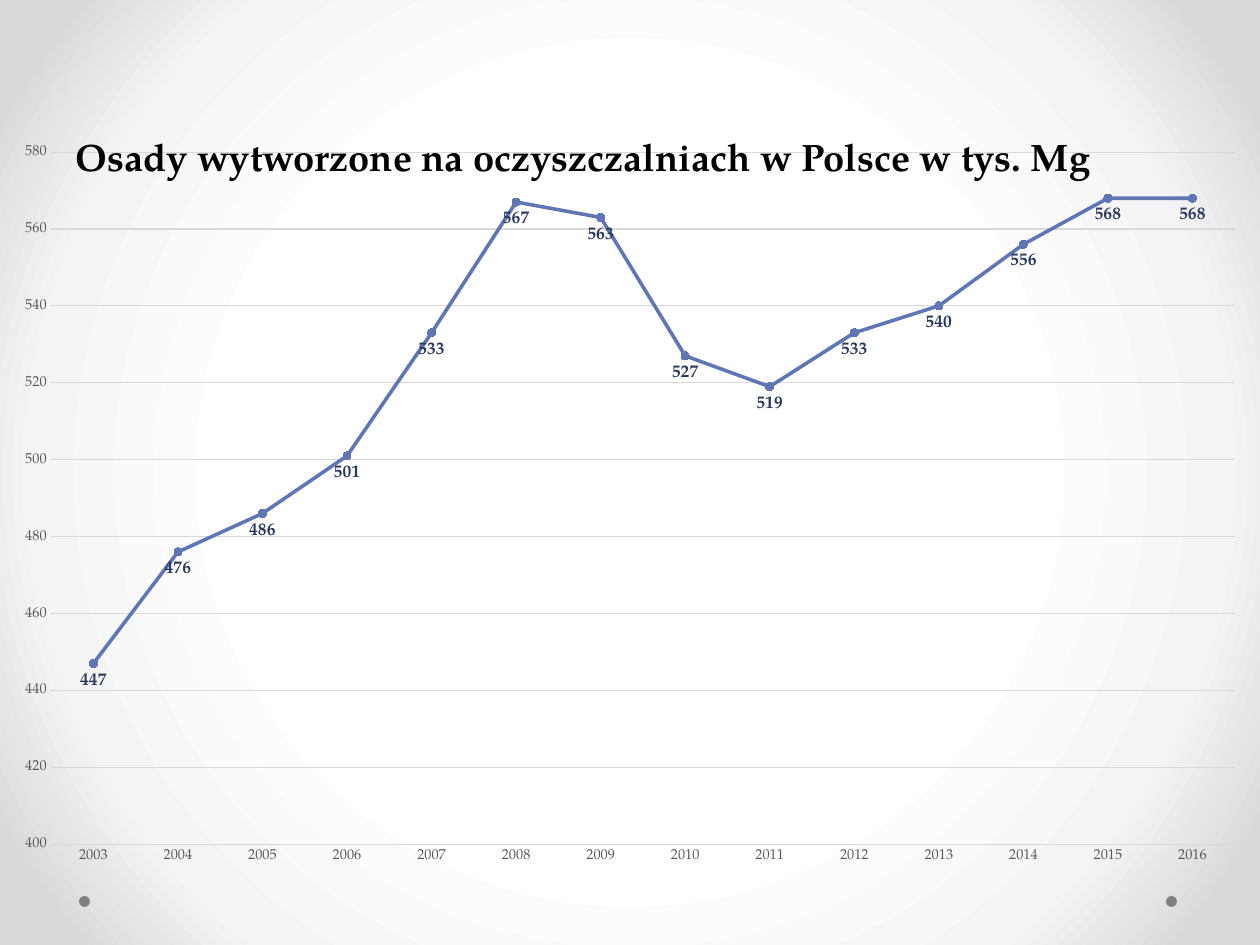
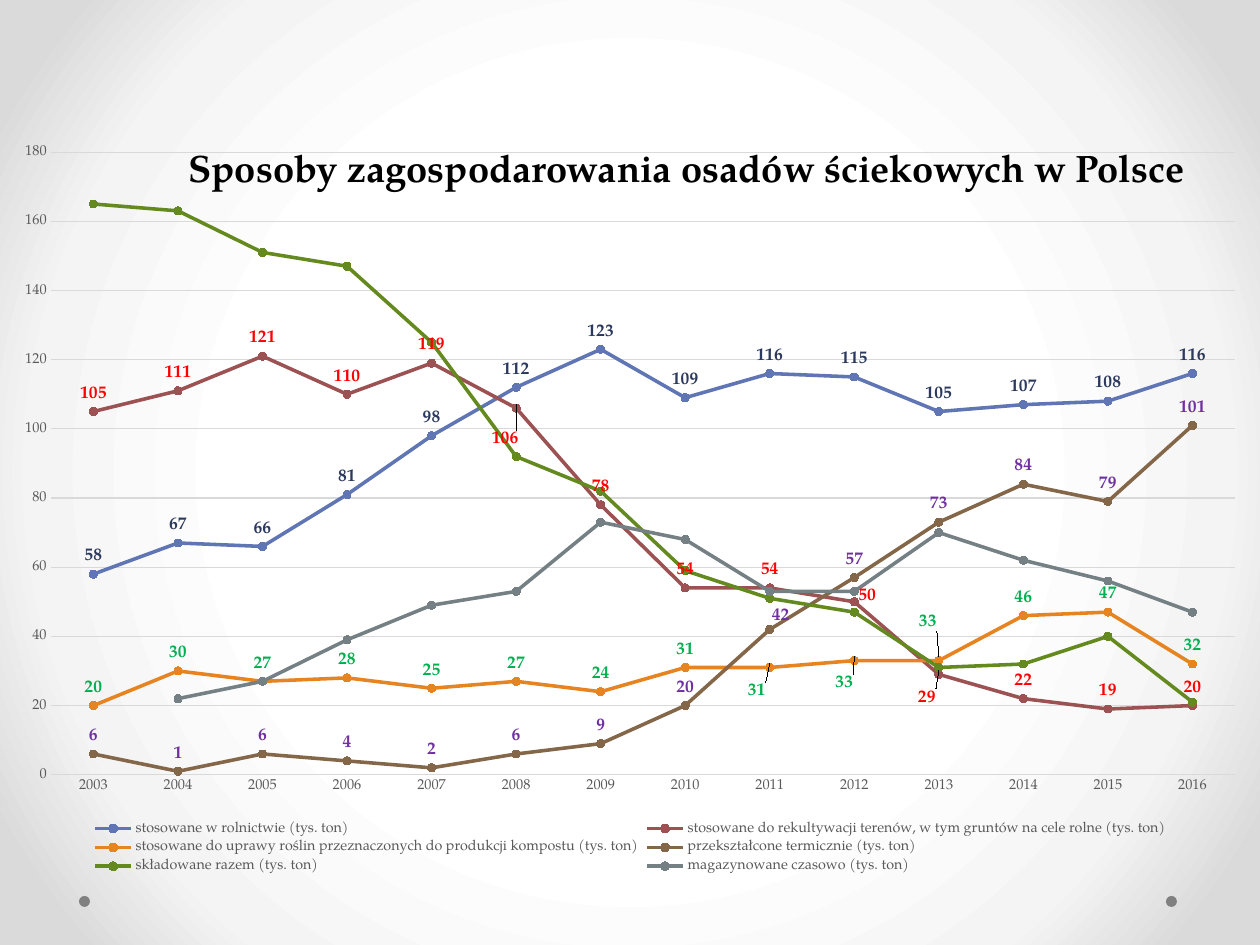
from pptx import Presentation
from pptx.chart.data import CategoryChartData
from pptx.dml.color import RGBColor
from pptx.enum.chart import (XL_CHART_TYPE, XL_LABEL_POSITION, XL_LEGEND_POSITION,
                             XL_MARKER_STYLE, XL_TICK_MARK)
from pptx.enum.shapes import MSO_SHAPE
from pptx.enum.text import MSO_ANCHOR, MSO_AUTO_SIZE, PP_ALIGN
from pptx.oxml import parse_xml
from pptx.oxml.ns import nsdecls
from pptx.util import Pt

# Scale and shared boxes: left, top, width, height in px
PX = 8000
SLIDE_WIDTH, SLIDE_HEIGHT = 1260, 945
CHART_BOX = (0, 130, 1260, 748)
DOT_SIZE, DOT_TOP, DOT_LEFTS = 11, 896, (79, 1166)

# Colours
BLACK = RGBColor(0x00, 0x00, 0x00)
DOT_GRAY = RGBColor(0x80, 0x80, 0x80)
AXIS_GRAY = RGBColor(0x59, 0x59, 0x59)
GRID_GRAY = RGBColor(0xD9, 0xD9, 0xD9)
BLUE = RGBColor(0x60, 0x76, 0xB4)
MAROON = RGBColor(0x9C, 0x52, 0x52)
ORANGE = RGBColor(0xE6, 0x84, 0x22)
BROWN = RGBColor(0x84, 0x66, 0x48)
OLIVE = RGBColor(0x63, 0x89, 0x1F)
SLATE = RGBColor(0x75, 0x80, 0x85)
NAVY = RGBColor(0x2C, 0x39, 0x5E)
RED = RGBColor(0xFF, 0x00, 0x00)
GREEN = RGBColor(0x00, 0xB0, 0x50)
PURPLE = RGBColor(0x70, 0x30, 0xA0)
BACKDROP_STOPS = ((50, RGBColor(0xFF, 0xFF, 0xFF)), (76, RGBColor(0xF4, 0xF4, 0xF4)),
                  (92, RGBColor(0xDA, 0xDA, 0xDA)))

# Text styles
FONT = "TeX Gyre Pagella"
TITLE_STYLE = {"name": FONT, "size": Pt(24), "bold": True}
CHART_STYLE = {"name": FONT, "size": Pt(10)}
AXIS_STYLE = {"name": FONT, "size": Pt(9), "bold": False}
LABEL_STYLE = {"name": FONT, "size": Pt(11), "bold": True}

# Chart contents. Series: name, line colour, label colour, values,
# {point index: (x, y) shift of its label in px}
YEARS = [str(year) for year in range(2003, 2017)]
CHART_SLIDES = [
    {
        "title": "Osady wytworzone na oczyszczalniach w Polsce w tys. Mg",
        "title_box": (64, 128, 1060, 57),
        "scale": (400, 580),
        "legend": False,
        "label_position": XL_LABEL_POSITION.BELOW,
        "series": [
            ("Osady", BLUE, NAVY,
             (447, 476, 486, 501, 533, 567, 563, 527, 519, 533, 540, 556, 568, 568), {}),
        ],
    },
    {
        "title": "Sposoby zagospodarowania osadów ściekowych w Polsce",
        "title_box": (177, 139, 1056, 57),
        "scale": (0, 180),
        "legend": True,
        "label_position": XL_LABEL_POSITION.ABOVE,
        "series": [
            ("stosowane w rolnictwie (tys. ton)", BLUE, NAVY,
             (58, 67, 66, 81, 98, 112, 123, 109, 116, 115, 105, 107, 108, 116), {}),
            ("stosowane do rekultywacji terenów, w tym gruntów na cele rolne (tys. ton)",
             MAROON, RED,
             (105, 111, 121, 110, 119, 106, 78, 54, 54, 50, 29, 22, 19, 20),
             {5: (-11, 49), 9: (13, 12), 10: (-12, 41)}),
            ("stosowane do uprawy roślin przeznaczonych do produkcji kompostu (tys. ton)",
             ORANGE, GREEN,
             (20, 30, 27, 28, 25, 27, 24, 31, 31, 33, 33, 46, 47, 32),
             {8: (-13, 41), 9: (-10, 40), 10: (-11, -21)}),
            ("przekształcone termicznie (tys. ton)", BROWN, PURPLE,
             (6, 1, 6, 4, 2, 6, 9, 20, 42, 57, 73, 84, 79, 101), {8: (11, 4)}),
            ("składowane razem (tys. ton)", OLIVE, None,
             (165, 163, 151, 147, 125, 92, 82, 59, 51, 47, 31, 32, 40, 21), {}),
            ("magazynowane czasowo (tys. ton)", SLATE, None,
             (None, 22, 27, 39, 49, 53, 73, 68, 53, 53, 70, 62, 56, 47), {}),
        ],
    },
]


def to_emu(box):
    return [length * PX for length in box]


def apply_font(font, style, color):
    for attribute, value in style.items():
        setattr(font, attribute, value)
    font.color.rgb = color


def apply_line(line, color, width):
    line.color.rgb = color
    line.width = Pt(width)


def set_backdrop(master):
    """Radial gradient behind every slide."""
    master.background.fill.solid()
    solid = master.element.xpath(".//p:bgPr/a:solidFill")[0]
    stops = "".join(f'<a:gs pos="{percent * 1000}"><a:srgbClr val="{color}"/></a:gs>'
                    for percent, color in BACKDROP_STOPS)
    solid.getparent().replace(solid, parse_xml(
        f'<a:gradFill {nsdecls("a")} rotWithShape="1"><a:gsLst>{stops}</a:gsLst>'
        '<a:path path="circle"><a:fillToRect l="50000" t="50000" r="50000" b="50000"/>'
        '</a:path></a:gradFill>'))


def add_master_dots(master, slide):
    """Footer dots, drawn on a slide and then moved to the master."""
    for number, left in enumerate(DOT_LEFTS):
        dot = slide.shapes.add_shape(
            MSO_SHAPE.OVAL, *to_emu((left, DOT_TOP, DOT_SIZE, DOT_SIZE)))
        dot.shadow.inherit = False
        dot.fill.solid()
        dot.fill.fore_color.rgb = DOT_GRAY
        dot.line.fill.background()
        dot.element.xpath("./p:nvSpPr/p:cNvPr")[0].set("id", str(20 + number))
        master.shapes.element.append(dot.element)


def place_title(slide, text, box):
    """Title in front of the chart."""
    title = slide.shapes.title
    title.left, title.top, title.width, title.height = to_emu(box)
    frame = title.text_frame
    frame.text = text
    frame.word_wrap = True
    frame.auto_size = MSO_AUTO_SIZE.SHAPE_TO_FIT_TEXT
    frame.vertical_anchor = MSO_ANCHOR.TOP
    paragraph = frame.paragraphs[0]
    paragraph.alignment = PP_ALIGN.LEFT
    apply_font(paragraph.runs[0].font, TITLE_STYLE, BLACK)
    title.element.getparent().append(title.element)


def format_axes(chart, scale):
    category_axis, value_axis = chart.category_axis, chart.value_axis
    for axis in (category_axis, value_axis):
        axis.major_tick_mark = axis.minor_tick_mark = XL_TICK_MARK.NONE
        apply_font(axis.tick_labels.font, AXIS_STYLE, AXIS_GRAY)
    apply_line(category_axis.format.line, GRID_GRAY, 0.75)
    value_axis.format.line.fill.background()
    value_axis.minimum_scale, value_axis.maximum_scale = scale
    value_axis.major_unit = 20
    apply_line(value_axis.major_gridlines.format.line, GRID_GRAY, 0.75)
    value_axis.tick_labels.number_format = "0"
    value_axis.tick_labels.number_format_is_linked = False


def format_series(series, color):
    series.smooth = False
    apply_line(series.format.line, color, 2.25)
    marker = series.marker
    marker.style = XL_MARKER_STYLE.CIRCLE
    marker.size = 5
    marker.format.fill.solid()
    marker.format.fill.fore_color.rgb = color
    apply_line(marker.format.line, color, 0.75)


def label_series(series, color, position, shifts, box):
    labels = series.data_labels
    labels.show_value = True
    labels.number_format = "0"
    labels.number_format_is_linked = False
    labels.position = position
    apply_font(labels.font, LABEL_STYLE, color)
    # Labels moved away from their default place
    for index, (shift_x, shift_y) in shifts.items():
        label = series.points[index].data_label
        apply_font(label.font, LABEL_STYLE, color)
        label.position = position
        label_index = labels._element.xpath(f"./c:dLbl/c:idx[@val='{index}']")[0]
        label_index.addnext(parse_xml(
            f'<c:layout {nsdecls("c")}><c:manualLayout>'
            f'<c:x val="{shift_x / box[2]:.4f}"/><c:y val="{shift_y / box[3]:.4f}"/>'
            '</c:manualLayout></c:layout>'))


def add_line_chart(slide, content, box):
    data = CategoryChartData()
    data.categories = YEARS
    for name, _, _, values, _ in content["series"]:
        data.add_series(name, values)
    chart = slide.shapes.add_chart(XL_CHART_TYPE.LINE_MARKERS, *to_emu(box), data).chart
    chart.has_title = False
    apply_font(chart.font, CHART_STYLE, BLACK)
    # The backdrop shows through the chart
    chart.element.xpath("./c:chart")[0].addnext(parse_xml(
        f'<c:spPr {nsdecls("c", "a")}><a:noFill/><a:ln><a:noFill/></a:ln></c:spPr>'))
    format_axes(chart, content["scale"])

    chart.has_legend = content["legend"]
    if chart.has_legend:
        chart.legend.position = XL_LEGEND_POSITION.BOTTOM
        chart.legend.include_in_layout = False
        apply_font(chart.legend.font, AXIS_STYLE, AXIS_GRAY)

    plot = chart.plots[0]
    plot.vary_by_categories = False
    for series, (_, color, label_color, _, shifts) in zip(plot.series, content["series"]):
        format_series(series, color)
        if label_color is not None:
            label_series(series, label_color, content["label_position"], shifts, box)


def add_chart_slide(presentation, content):
    slide = presentation.slides.add_slide(presentation.slide_layouts[5])
    add_line_chart(slide, content, CHART_BOX)
    place_title(slide, content["title"], content["title_box"])
    return slide


def main():
    presentation = Presentation()
    presentation.slide_width, presentation.slide_height = to_emu((SLIDE_WIDTH, SLIDE_HEIGHT))
    slides = [add_chart_slide(presentation, content) for content in CHART_SLIDES]
    set_backdrop(presentation.slide_master)
    add_master_dots(presentation.slide_master, slides[0])
    presentation.save("out.pptx")


if __name__ == "__main__":
    main()
